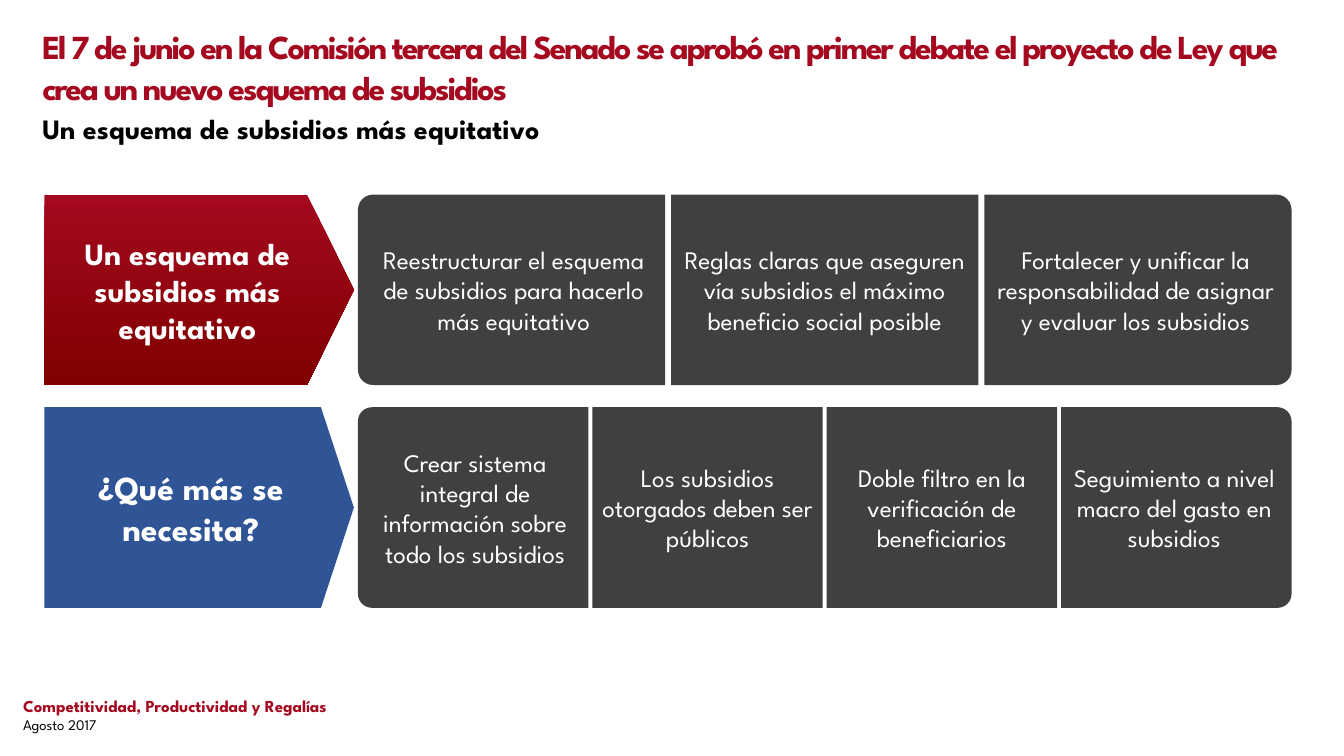
from lxml.etree import SubElement
from pptx import Presentation
from pptx.dml.color import RGBColor
from pptx.enum.shapes import MSO_SHAPE
from pptx.enum.text import MSO_ANCHOR, MSO_AUTO_SIZE, PP_ALIGN
from pptx.oxml.ns import qn
from pptx.util import Inches, Pt

FONT = "League Spartan"
RED, DARK_RED, BLUE = "A4091F", "800000", "2F5597"
GREY, BLACK, WHITE = "404040", "000000", "FFFFFF"

ROWS = [
    {
        "top": 1.93, "height": 1.89, "gap": 0.06, "point": 0.246,
        "fills": [RED, DARK_RED], "size": 22, "corner": 0.08,
        "label": "Un esquema de subsidios más equitativo",
        "cards": [
            "Reestructurar el esquema de subsidios para hacerlo más equitativo",
            "Reglas claras que aseguren vía subsidios el máximo beneficio social posible",
            "Fortalecer y unificar la responsabilidad de asignar y evaluar los subsidios",
        ],
    },
    {
        "top": 4.04, "height": 1.99, "gap": 0.04, "point": 0.164,
        "fills": [BLUE], "size": 24, "corner": 0.07,
        "label": "¿Qué más se necesita?",
        "cards": [
            "Crear sistema integral de información sobre todo los subsidios",
            "Los subsidios otorgados deben ser públicos",
            "Doble filtro en la verificación de beneficiarios",
            "Seguimiento a nivel macro del gasto en subsidios",
        ],
    },
]


def color(value):
    return RGBColor.from_string(value)


def write(paragraph, text, size, fill, bold=False):
    span = paragraph.add_run()
    span.text = text
    for name, value in {"name": FONT, "size": Pt(size), "bold": bold}.items():
        setattr(span.font, name, value)
    span.font.color.rgb = color(fill)
    return span


def format_frame(frame, anchor):
    settings = {"word_wrap": True, "auto_size": MSO_AUTO_SIZE.NONE,
                "vertical_anchor": anchor}
    for name, value in settings.items():
        setattr(frame, name, value)


def place(shape, left, top, width, height):
    lengths = {"left": left, "top": top, "width": width, "height": height}
    for name, value in lengths.items():
        setattr(shape, name, Inches(value))


def add_headings(page, left, width):
    title, subtitle = page.shapes.title, page.placeholders[1]
    place(title, left, 0.21, width, 0.61)
    place(subtitle, left, 1.09, width, 0.39)
    for box in (title, subtitle):
        format_frame(box.text_frame, MSO_ANCHOR.TOP)
        box.text_frame.paragraphs[0].alignment = PP_ALIGN.LEFT

    span = write(
        title.text_frame.paragraphs[0],
        "El 7 de junio en la Comisión tercera del Senado se aprobó en primer "
        "debate el proyecto de Ley que crea un nuevo esquema de subsidios",
        24, RED, True)
    span.font._element.set("spc", "-150")

    paragraph = subtitle.text_frame.paragraphs[0]
    paragraph.line_spacing = 0.9
    paragraph.space_before = Pt(0)
    properties = paragraph._p.get_or_add_pPr()
    properties.set("marL", "0")
    properties.set("indent", "0")
    SubElement(properties, qn("a:buNone"))
    write(paragraph, "Un esquema de subsidios más equitativo", 20, BLACK, True)


def add_block(page, kind, box, fills, adjustments, text, size, bold):
    """Add a filled shape with centred text; two fills make a gradient from top to bottom."""
    shape = page.shapes.add_shape(kind, *(Inches(length) for length in box))
    shape.shadow.inherit = False
    shape.line.fill.background()
    for index, value in enumerate(adjustments):
        shape.adjustments[index] = value
    if len(fills) == 1:
        shape.fill.solid()
        shape.fill.fore_color.rgb = color(fills[0])
    else:
        shape.fill.gradient()
        shape.fill.gradient_angle = 270
        for stop, fill, position in zip(shape.fill.gradient_stops, fills, (0, 1)):
            stop.color.rgb = color(fill)
            stop.position = position
    format_frame(shape.text_frame, MSO_ANCHOR.MIDDLE)
    paragraph = shape.text_frame.paragraphs[0]
    paragraph.alignment = PP_ALIGN.CENTER
    write(paragraph, text, size, WHITE, bold)
    return shape


def add_card(page, left, top, width, height, corners, text):
    """Add a card turned a quarter left, so its two adjustments round the left and right ends."""
    offset = (width - height) / 2
    box = (left + offset, top - offset, height, width)
    card = add_block(page, MSO_SHAPE.ROUND_2_SAME_RECTANGLE, box, [GREY],
                     corners, text, 18, False)
    card.rotation = 270
    card.text_frame._txBody.bodyPr.set("vert", "vert")


def add_row(page, row, left, width):
    top, height, gap, cards = (row[key] for key in ("top", "height", "gap", "cards"))
    label_width, cards_offset = 3.07, 3.11
    add_block(page, MSO_SHAPE.PENTAGON, (left, top, label_width, height),
              row["fills"], [row["point"]], row["label"], row["size"], True)
    card_width = (width - cards_offset - gap * (len(cards) - 1)) / len(cards)
    for index, text in enumerate(cards):
        corners = [row["corner"] if index == end else 0
                   for end in (0, len(cards) - 1)]
        card_left = left + cards_offset + index * (card_width + gap)
        add_card(page, card_left, top, card_width, height, corners, text)


def add_footer(page, left, top, width, height):
    box = page.shapes.add_textbox(*map(Inches, (left, top, width, height)))
    frame = box.text_frame
    format_frame(frame, MSO_ANCHOR.TOP)
    for side in ("left", "top", "right", "bottom"):
        setattr(frame, f"margin_{side}", Inches(0.1))
    write(frame.paragraphs[0], "Competitividad, Productividad y Regalías", 12, RED, True)
    write(frame.add_paragraph(), "Agosto 2017", 10.5, BLACK)


def main():
    deck = Presentation()
    deck.slide_width, deck.slide_height = Inches(13.33), Inches(7.5)
    page = deck.slides.add_slide(deck.slide_layouts[1])
    add_headings(page, 0.32, 12.7)
    for row in ROWS:
        add_row(page, row, 0.44, 12.37)
    add_footer(page, 0.13, 6.8, 9.15, 0.55)
    deck.save("out.pptx")


if __name__ == "__main__":
    main()
